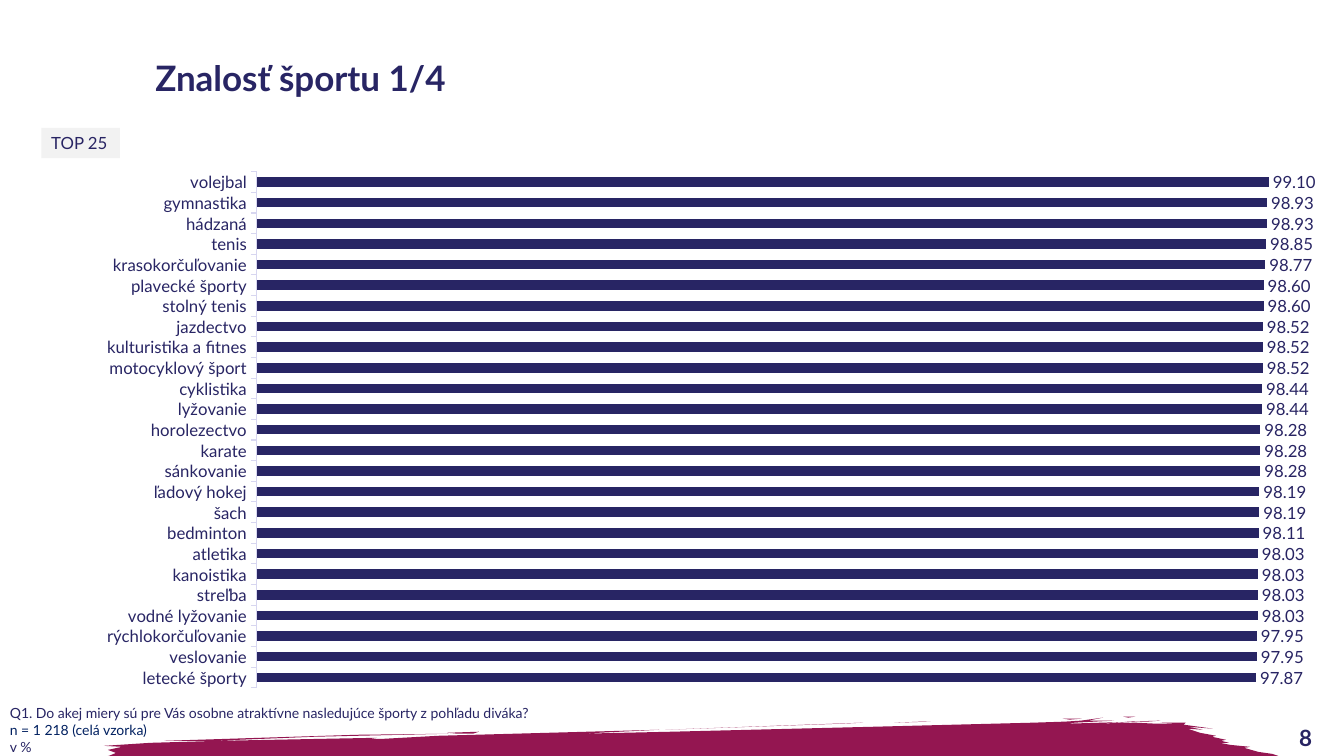
from pptx import Presentation
from pptx.chart.data import CategoryChartData
from pptx.dml.color import RGBColor
from pptx.enum import chart as ch, shapes, text
from pptx.oxml import parse_xml
from pptx.oxml.ns import nsdecls
from pptx.util import Pt

PX = 9144  # 100 px to the inch
FONT = "Lato"
NAVY = RGBColor(0x28, 0x25, 0x64)
NAVY_LABEL = RGBColor(0x28, 0x24, 0x63)
BLUE = RGBColor(0x00, 0x20, 0x60)
LILAC = RGBColor(0xD7, 0xD6, 0xF0)
GREY = RGBColor(0xF2, 0xF2, 0xF2)
CRIMSON = RGBColor(0x94, 0x16, 0x51)


def box(*lengths):
    """Turn px lengths into EMU."""
    return [length * PX for length in lengths]


def style(font, size, color, bold=False):
    font.name = FONT
    font.size = Pt(size)
    font.bold = bold
    font.color.rgb = color


prs = Presentation()
prs.slide_width, prs.slide_height = box(1333, 750)
slide = prs.slides.add_slide(prs.slide_layouts[5])

# Title
title = slide.shapes.title
title.left, title.top, title.width, title.height = box(144, 28, 978, 104)
title.text_frame.auto_size = text.MSO_AUTO_SIZE.NONE
title.text_frame.vertical_anchor = text.MSO_ANCHOR.MIDDLE
heading = title.text_frame.paragraphs[0]
heading.alignment = text.PP_ALIGN.LEFT
heading.line_spacing = 0.9
run = heading.add_run()
run.text = "Znalosť športu 1/4"
style(run.font, 25, NAVY, bold=True)

# Page number
page_number = slide.shapes.add_textbox(*box(1256, 714, 78, 36)).text_frame
page_number.word_wrap = True
page_number.vertical_anchor = text.MSO_ANCHOR.MIDDLE
page_number.paragraphs[0].alignment = text.PP_ALIGN.CENTER
run = page_number.paragraphs[0].add_run()
run.text = "8"
style(run.font, 16, NAVY_LABEL, bold=True)

# Awareness of each sport
awareness = {
    "volejbal": 99.1, "gymnastika": 98.93, "hádzaná": 98.93, "tenis": 98.85,
    "krasokorčuľovanie": 98.77, "plavecké športy": 98.6, "stolný tenis": 98.6,
    "jazdectvo": 98.52, "kulturistika a fitnes": 98.52,
    "motocyklový šport": 98.52, "cyklistika": 98.44, "lyžovanie": 98.44,
    "horolezectvo": 98.28, "karate": 98.28, "sánkovanie": 98.28,
    "ľadový hokej": 98.19, "šach": 98.19, "bedminton": 98.11,
    "atletika": 98.03, "kanoistika": 98.03, "streľba": 98.03,
    "vodné lyžovanie": 98.03, "rýchlokorčuľovanie": 97.95,
    "veslovanie": 97.95, "letecké športy": 97.87,
}
chart_data = CategoryChartData()
chart_data.categories = list(awareness)
chart_data.add_series("Series 1", list(awareness.values()))
chart = slide.shapes.add_chart(
    ch.XL_CHART_TYPE.BAR_CLUSTERED, *box(40, 164, 1265, 530), chart_data).chart
style(chart.font, 12, NAVY)
chart.has_legend = False
chart.has_title = False

sports = chart.category_axis
sports.reverse_order = True
sports.major_tick_mark = ch.XL_TICK_MARK.OUTSIDE
sports.has_major_gridlines = False
sports.format.line.color.rgb = LILAC
sports.format.line.width = Pt(0.75)
style(sports.tick_labels.font, 12, NAVY)

percent = chart.value_axis
percent.visible = False
percent.has_major_gridlines = False
percent.minimum_scale, percent.maximum_scale = 0, 100

plot = chart.plots[0]
plot.gap_width = 117
plot.overlap = 100
plot.vary_by_categories = False
bars = plot.series[0]
bars.format.fill.solid()
bars.format.fill.fore_color.rgb = NAVY
labels = bars.data_labels
labels.show_value = True
labels.position = ch.XL_LABEL_POSITION.OUTSIDE_END
labels.number_format = "#,##0.00"
labels.number_format_is_linked = False
style(labels.font, 12, NAVY_LABEL)

plot_area = chart._chartSpace.chart.plotArea
for old_layout in plot_area.xpath("c:layout"):
    plot_area.remove(old_layout)
plot_area.insert(0, parse_xml(
    f'<c:layout {nsdecls("c")}><c:manualLayout><c:layoutTarget val="inner"/>'
    '<c:xMode val="edge"/><c:yMode val="edge"/><c:x val="0.17"/><c:y val="0.012"/>'
    '<c:w val="0.802"/><c:h val="0.966"/></c:manualLayout></c:layout>'))

# Brush stroke along the bottom edge: main body, then loose bristles
body = [
    (115, 747), (108, 750), (84, 752), (105, 753), (115, 755), (104, 755),
    (120, 757), (113, 761), (135, 761), (130, 765), (136, 769), (131, 773),
    (144, 774), (152, 777), (173, 781), (164, 784), (179, 786), (277, 787),
    (404, 787), (564, 784), (724, 780), (828, 777), (901, 775), (985, 771),
    (1125, 770), (1153, 769), (1173, 767), (1221, 762), (1243, 764),
    (1237, 760), (1260, 759), (1253, 757), (1242, 754), (1255, 753),
    (1266, 751), (1258, 750), (1268, 750), (1262, 748), (1248, 746),
    (1234, 742), (1240, 741), (1220, 739), (1210, 737), (1219, 737),
    (1211, 735), (1216, 734), (1202, 731), (1206, 730), (1190, 727),
    (1178, 723), (1193, 724), (1178, 721), (1203, 723), (1174, 719),
    (1176, 717), (1151, 717), (1170, 718), (1146, 718), (1126, 717),
    (1083, 718), (1128, 716), (1059, 718), (1066, 717), (1105, 715),
    (1079, 715), (1094, 712), (1072, 715), (1056, 716), (1025, 717),
    (869, 721), (666, 726), (575, 728), (654, 724), (619, 725), (435, 730),
    (381, 733), (367, 733), (374, 732), (218, 735), (149, 737), (103, 740),
    (121, 741), (107, 744),
]
bristles = [
    [(1073, 713), (1054, 713), (1061, 714)],
    [(914, 716), (887, 717), (923, 716)],
    [(856, 717), (660, 724), (835, 718)],
    [(1119, 712), (1126, 711), (1114, 711)],
    [(1138, 716), (1151, 715), (1118, 716)],
    [(354, 729), (163, 735), (212, 735), (311, 731), (445, 728)],
    [(444, 727), (475, 726), (469, 728), (454, 728)],
]
builder = slide.shapes.build_freeform(*body[0], scale=PX)
builder.add_line_segments(body[1:])
for bristle in bristles:
    builder.move_to(*bristle[0])
    builder.add_line_segments(bristle[1:])
brush = builder.convert_to_shape()
brush.shadow.inherit = False
brush.fill.solid()
brush.fill.fore_color.rgb = CRIMSON
brush.line.fill.background()

# Question and sample
footnote = slide.shapes.add_textbox(*box(0, 694, 534, 61)).text_frame
footnote.word_wrap = False
footnote.auto_size = text.MSO_AUTO_SIZE.SHAPE_TO_FIT_TEXT
footnote_lines = [
    ("Q1. Do akej miery sú pre Vás osobne atraktívne nasledujúce športy z pohľadu diváka?", NAVY),
    ("n = 1 218 (celá vzorka)", BLUE),
    ("v %", NAVY),
]
for i, (line, color) in enumerate(footnote_lines):
    paragraph = footnote.add_paragraph() if i else footnote.paragraphs[0]
    run = paragraph.add_run()
    run.text = line
    style(run.font, 10, color)

# Ranking tag
tag = slide.shapes.add_shape(shapes.MSO_SHAPE.RECTANGLE, *box(41, 127, 78, 30))
tag.shadow.inherit = False
tag.fill.solid()
tag.fill.fore_color.rgb = GREY
tag.line.fill.background()
tag.text_frame.word_wrap = False
tag.text_frame.auto_size = text.MSO_AUTO_SIZE.SHAPE_TO_FIT_TEXT
tag.text_frame.vertical_anchor = text.MSO_ANCHOR.TOP
tag.text_frame.paragraphs[0].alignment = text.PP_ALIGN.LEFT
run = tag.text_frame.paragraphs[0].add_run()
run.text = "TOP 25"
style(run.font, 12, NAVY_LABEL)

prs.save("out.pptx")
